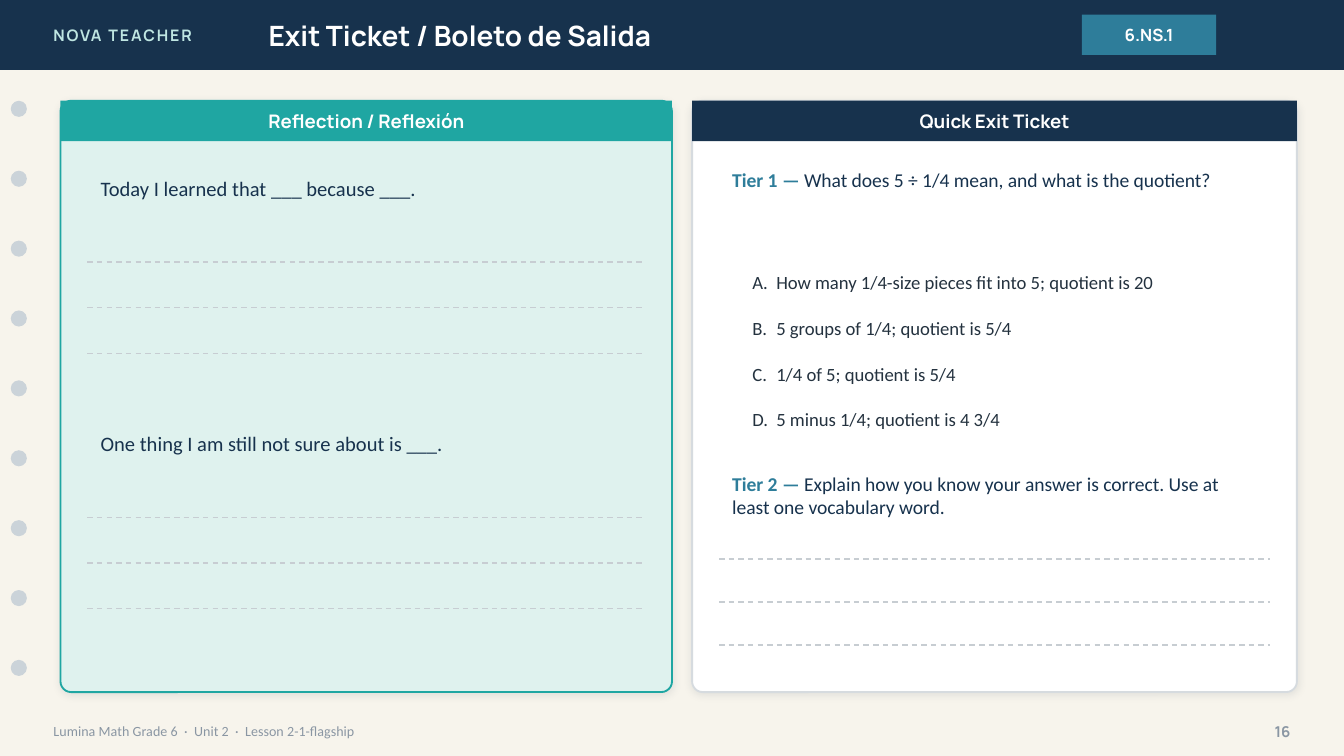
from dataclasses import dataclass

import pptx
import pptx.dml.color
import pptx.enum.dml
import pptx.enum.shapes
import pptx.enum.text
import pptx.oxml.ns
import pptx.util
from lxml import etree

Pt = pptx.util.Pt
RGB = pptx.dml.color.RGBColor.from_string
Shape = pptx.enum.shapes.MSO_SHAPE
Align = pptx.enum.text.PP_ALIGN
Anchor = pptx.enum.text.MSO_ANCHOR
qn = pptx.oxml.ns.qn


@dataclass(frozen=True)
class Theme:
    paper: str = "F7F4EC"
    navy: str = "17324D"
    blue: str = "2E7D9A"
    teal: str = "1FA6A2"
    mint: str = "DFF2EE"
    pale_teal: str = "BFE6E2"
    white: str = "FFFFFF"
    hole: str = "CBD3D9"
    muted: str = "8A96A3"
    ink: str = "24323F"
    rule: str = "C7CDD2"
    border: str = "D6DBDF"
    shadow: str = "1C2E42"
    heading: str = "Manrope"
    body: str = "Calibri"
    title_size: float = 15
    prompt_size: float = 11
    question_size: float = 10.5
    card_size: float = 10
    code_size: float = 9
    brand_size: float = 8.5
    page_size: float = 8
    footer_size: float = 7.5


THEME = Theme()


def write(frame, text, *, size, color, font=THEME.body, bold=False,
          align=Align.LEFT, anchor=Anchor.MIDDLE, spacing=0, hanging=0,
          lead="", lead_color=THEME.blue):
    """Fill a text frame; lead is an optional bold opening run."""
    frame.word_wrap = True
    frame.vertical_anchor = anchor
    paragraph = frame.paragraphs[0]
    paragraph.alignment = align
    if hanging:
        properties = paragraph._p.get_or_add_pPr()
        properties.set("marL", str(Pt(hanging)))
        properties.set("indent", str(-Pt(hanging)))
    for words, tint, heavy in ((lead, lead_color, True), (text, color, bold)):
        if not words:
            continue
        run = paragraph.add_run()
        run.text = words
        run.font.name = font
        run.font.size = Pt(size)
        run.font.bold = heavy
        run.font.color.rgb = RGB(tint)
        if spacing:
            run._r.get_or_add_rPr().set("spc", str(int(spacing * 100)))


def add_label(slide, left, top, width, height, text, **text_format):
    box = slide.shapes.add_textbox(Pt(left), Pt(top), Pt(width), Pt(height))
    write(box.text_frame, text, **text_format)


def add_block(slide, left, top, width, height, fill, kind=Shape.RECTANGLE, outline=None):
    block = slide.shapes.add_shape(kind, Pt(left), Pt(top), Pt(width), Pt(height))
    block.shadow.inherit = False
    block.fill.solid()
    block.fill.fore_color.rgb = RGB(fill)
    if outline:
        block.line.color.rgb = RGB(outline)
        block.line.width = Pt(1)
    else:
        block.line.fill.background()
    return block


def add_soft_shadow(block):
    effects = block._element.spPr.find(qn("a:effectLst"))
    shadow = etree.SubElement(effects, qn("a:outerShdw"), blurRad=str(Pt(4)),
                              dist=str(Pt(1)), dir="5400000", algn="bl", rotWithShape="0")
    color = etree.SubElement(shadow, qn("a:srgbClr"), val=THEME.shadow)
    etree.SubElement(color, qn("a:alpha"), val="10000")


def add_card(slide, left, width, title, fill, accent, outline):
    top = 54
    card = add_block(slide, left, top, width, 316.8, fill, Shape.ROUNDED_RECTANGLE, outline)
    card.adjustments[0] = 0.018
    add_soft_shadow(card)
    band = add_block(slide, left, top, width, 21.6, accent)
    write(band.text_frame, title, size=THEME.card_size, color=THEME.white,
          font=THEME.heading, bold=True, align=Align.CENTER)


def add_writing_lines(slide, left, top, width, gap, count=3):
    for row in range(count):
        y = Pt(top + row * gap)
        line = slide.shapes.add_connector(
            pptx.enum.shapes.MSO_CONNECTOR.STRAIGHT, Pt(left), y, Pt(left + width), y)
        line.line.color.rgb = RGB(THEME.rule)
        line.line.width = Pt(0.75)
        line.line.dash_style = pptx.enum.dml.MSO_LINE.DASH
        etree.SubElement(line._element.spPr, qn("a:effectLst"))


def add_header(slide):
    height = 37.44
    add_block(slide, 0, 0, 720, height, THEME.navy)
    heading = dict(font=THEME.heading, bold=True)
    add_label(slide, 21.6, 0, 172.8, height, "NOVA TEACHER", size=THEME.brand_size,
              color=THEME.pale_teal, spacing=1, **heading)
    add_label(slide, 136.8, 0, 403.2, height, "Exit Ticket / Boleto de Salida",
              size=THEME.title_size, color=THEME.white, **heading)
    standard = add_block(slide, 579.6, 7.92, 72, 21.6, THEME.blue)
    write(standard.text_frame, "6.NS.1", size=THEME.code_size, color=THEME.white,
          align=Align.CENTER, **heading)


def add_binder_holes(slide):
    for hole in range(9):
        add_block(slide, 5.76, 54 + hole * 37.44, 8.64, 8.64, THEME.hole, Shape.OVAL)


def add_footer(slide):
    top, height = 381.6, 20.16
    add_label(slide, 21.6, top, 504, height,
              "Lumina Math Grade 6  ·  Unit 2  ·  Lesson 2-1-flagship",
              size=THEME.footer_size, color=THEME.muted)
    add_label(slide, 662.4, top, 36, height, "16", size=THEME.page_size,
              color=THEME.muted, font=THEME.heading, bold=True, align=Align.RIGHT)


def add_reflection(slide):
    add_card(slide, 32.4, 327.6, "Reflection / Reflexión", THEME.mint, THEME.teal, THEME.teal)
    left, width = 46.8, 298.8
    prompts = ("Today I learned that ___ because ___.",
               "One thing I am still not sure about is ___.")
    for row, prompt in enumerate(prompts):
        top = 86.4 + row * 136.8
        add_label(slide, left, top, width, 28.8, prompt,
                  size=THEME.prompt_size, color=THEME.navy)
        add_writing_lines(slide, left, top + 54, width, gap=24.48)


def add_exit_questions(slide):
    add_card(slide, 370.8, 324, "Quick Exit Ticket", THEME.white, THEME.navy, THEME.border)
    left, width = 385.2, 295.2
    question = dict(size=THEME.question_size, color=THEME.navy, anchor=Anchor.TOP)
    add_label(slide, left, 86.4, width, 50.4,
              "What does 5 ÷ 1/4 mean, and what is the quotient?",
              lead="Tier 1 — ", **question)
    choices = ("How many 1/4-size pieces fit into 5; quotient is 20",
               "5 groups of 1/4; quotient is 5/4",
               "1/4 of 5; quotient is 5/4",
               "5 minus 1/4; quotient is 4 3/4")
    for row, (letter, choice) in enumerate(zip("ABCD", choices)):
        add_label(slide, 396, 140.4 + row * 24.48, 280.8, 21.6, f"{letter}.\t{choice}",
                  size=THEME.card_size, color=THEME.ink, hanging=12.8)
    add_label(slide, left, 249.12, width, 39.6,
              "Explain how you know your answer is correct. Use at least one vocabulary word.",
              lead="Tier 2 — ", **question)
    add_writing_lines(slide, left, 299.52, width, gap=23.04)


def main():
    deck = pptx.Presentation()
    deck.slide_width, deck.slide_height = Pt(720), Pt(405)
    slide = deck.slides.add_slide(deck.slide_layouts[6])
    slide.background.fill.solid()
    slide.background.fill.fore_color.rgb = RGB(THEME.paper)
    add_header(slide)
    add_binder_holes(slide)
    add_footer(slide)
    add_reflection(slide)
    add_exit_questions(slide)
    deck.save("out.pptx")


if __name__ == "__main__":
    main()
